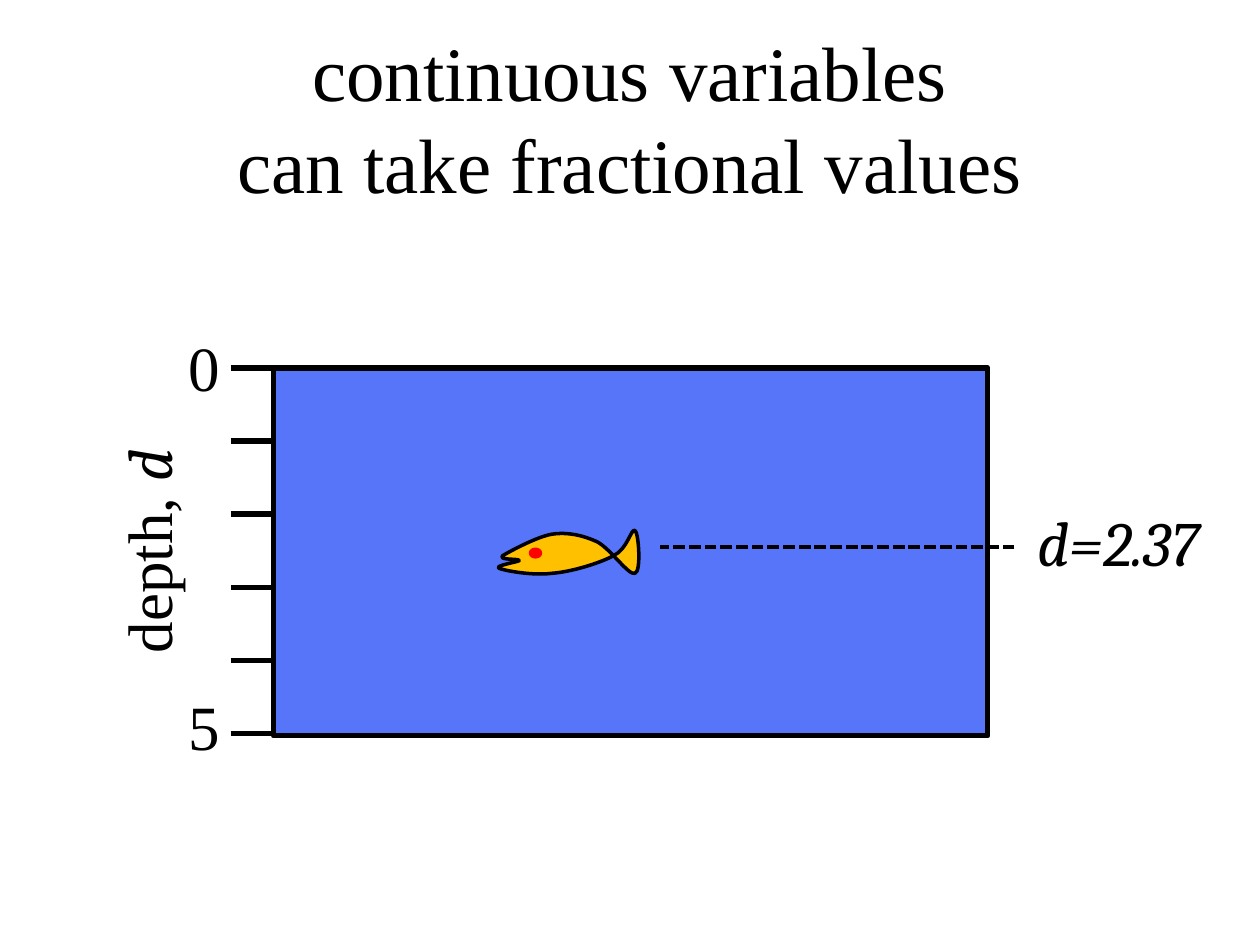
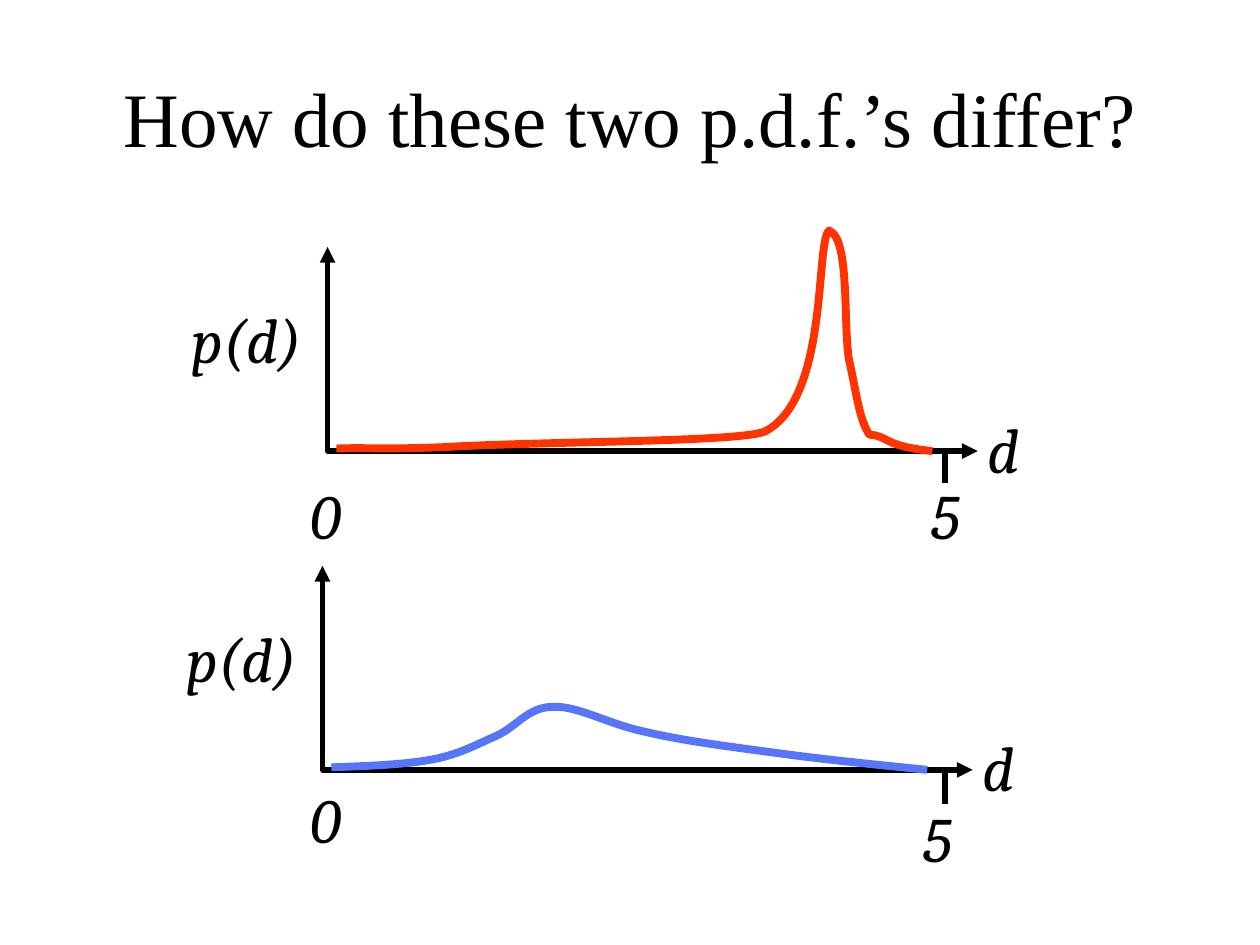
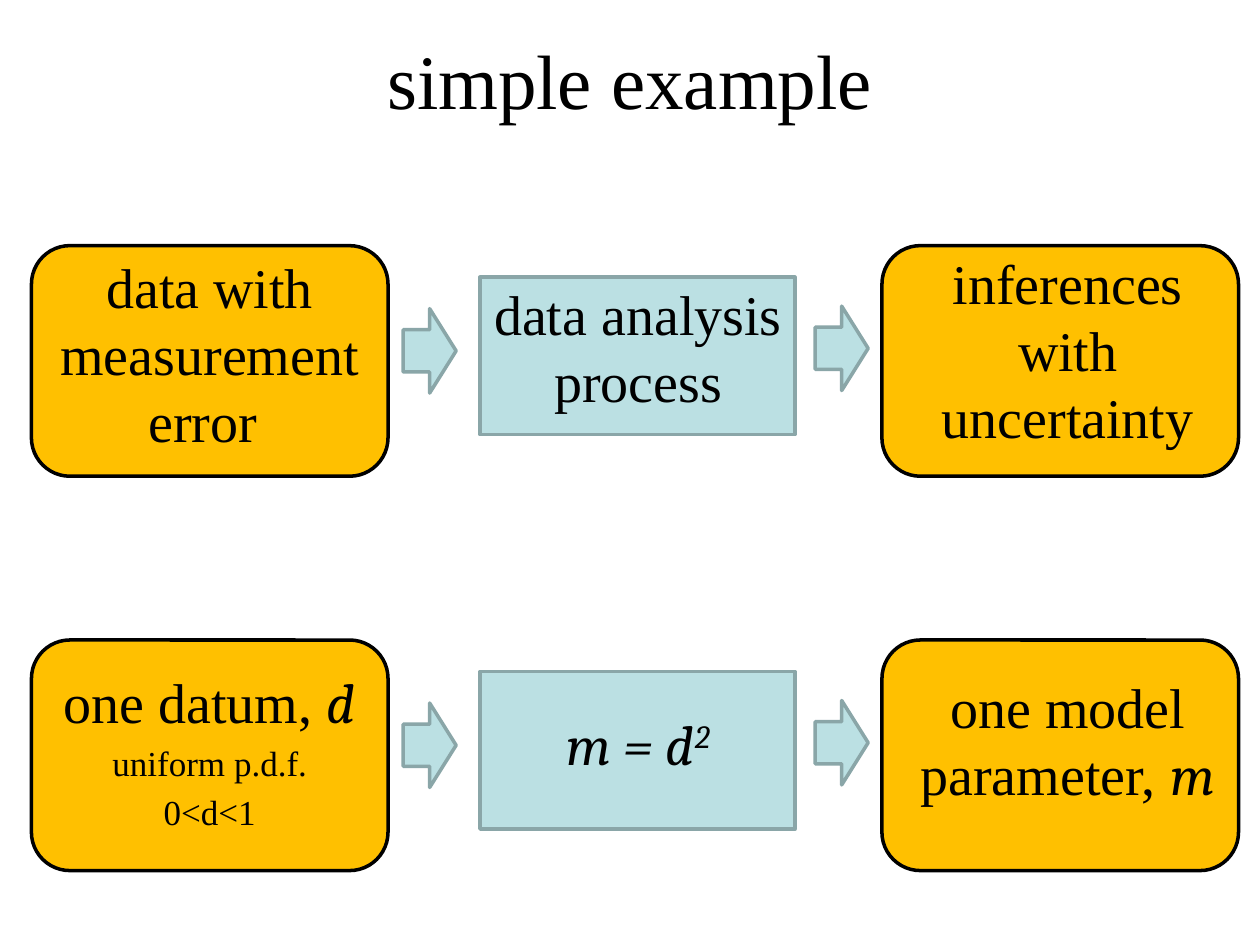
from dataclasses import dataclass
from typing import NamedTuple

from lxml.etree import SubElement
from pptx import Presentation
from pptx.dml.color import RGBColor
from pptx.enum.dml import MSO_LINE
from pptx.enum.shapes import MSO_CONNECTOR, MSO_SHAPE
from pptx.enum.text import MSO_ANCHOR as Anchor, MSO_AUTO_SIZE, PP_ALIGN
from pptx.oxml.ns import qn
from pptx.util import Inches, Pt

COLORS = {
    "ink": "000000", "paper": "FFFFFF", "water": "5675F8", "gold": "FFC000",
    "red": "FF0000", "peak": "FF3300", "pale": "BBE0E3", "pale_edge": "8AA6A8",
}
SERIF, MATH = "Times New Roman", "Cambria"
Point = tuple[float, float]


class Box(NamedTuple):
    left: float
    top: float
    width: float
    height: float

    def moved(self, dx: float, dy: float) -> "Box":
        return Box(self.left + dx, self.top + dy, self.width, self.height)


class Words(NamedTuple):
    text: str
    font: str = SERIF
    size: float = 36
    raised: bool = False


@dataclass(frozen=True)
class Plot:
    origin: Point
    color: str
    curve: list[Point]
    zero: Point
    five: Point
    tick_top: float


@dataclass(frozen=True)
class Step:
    text_box: Box
    lines: list[list[Words]]


FISH = [
    (3.99, 4.41), (4.04, 4.38), (4.26, 4.26), (4.38, 4.24),
    (4.51, 4.22), (4.63, 4.25), (4.74, 4.3), (4.85, 4.36), (4.99, 4.57), (5.04, 4.55),
    (5.09, 4.54), (5.07, 4.23), (5.04, 4.21), (5.01, 4.19), (4.98, 4.36), (4.87, 4.41),
    (4.76, 4.47), (4.53, 4.54), (4.38, 4.55), (4.23, 4.57), (4.01, 4.53), (3.96, 4.51),
    (3.92, 4.49), (4.11, 4.46), (4.12, 4.45), (4.13, 4.43), (3.95, 4.45), (3.99, 4.41),
]
PLOTS = [
    Plot((2.6, 3.58), "peak", [
        (2.67, 3.56), (2.96, 3.55), (2.93, 3.57), (3.5, 3.55),
        (4.36, 3.5), (5.93, 3.51), (6.08, 3.42), (6.58, 3.15), (6.47, 1.93), (6.58, 1.83),
        (6.75, 1.89), (6.69, 2.59), (6.74, 2.86), (6.8, 3.13), (6.82, 3.33), (6.9, 3.45),
        (7.06, 3.46), (7, 3.54), (7.4, 3.58),
    ], (2, 3.67), (6.92, 3.67), 3.58),
    Plot((2.56, 6.11), "water", [
        (2.63, 6.09), (2.91, 6.08), (3.2, 6.07), (3.42, 6.03),
        (3.64, 5.99), (3.78, 5.91), (3.94, 5.84), (4.1, 5.77), (4.19, 5.61), (4.39, 5.61),
        (4.59, 5.6), (4.83, 5.75), (5.13, 5.81), (5.42, 5.88), (5.82, 5.93), (6.19, 5.98),
        (6.56, 6.03), (6.96, 6.07), (7.36, 6.11),
    ], (2, 6.08), (6.86, 6.23), 6.13),
]
ROW_PITCH = 3.13
ROW_SHAPES = [
    (MSO_SHAPE.RECTANGLE, Box(3.81, 2.2, 2.5, 1.25), "pale", "pale_edge"),
    (MSO_SHAPE.ROUNDED_RECTANGLE, Box(7, 1.95, 2.83, 1.83), "gold", "ink"),
    (MSO_SHAPE.ROUNDED_RECTANGLE, Box(0.25, 1.95, 2.83, 1.83), "gold", "ink"),
    (MSO_SHAPE.RIGHT_ARROW, Box(3.2, 2.45, 0.42, 0.67), "pale", "pale_edge"),
    (MSO_SHAPE.RIGHT_ARROW, Box(6.47, 2.43, 0.42, 0.67), "pale", "pale_edge"),
]
FIRST_STEP = Step(Box(0.33, 1.95, 2.67, 1.92), [[Words("data with measurement error ", size=32)]])
OTHER_STEPS = [
    Step(Box(3.73, 2.17, 2.67, 1.92), [[Words("data analysis process", size=32)]]),
    Step(Box(7.14, 1.92, 2.67, 1.92), [[Words("inferences with uncertainty", size=32)]]),
    Step(Box(0.33, 5.25, 2.67, 1.92), [
        [Words("one datum, ", size=32), Words("d", MATH, 32)],
        [Words("uniform p.d.f.", size=20)],
        [Words("0<d<1", size=20)],
    ]),
    Step(Box(3.73, 5.58, 2.67, 0.67), [[Words("m = d", MATH, 32), Words("2", MATH, 32, True)]]),
    Step(Box(7.14, 5.29, 2.67, 1.29), [[Words("one model parameter, ", size=32), Words("m", MATH, 32)]]),
]


def rgb(name: str) -> RGBColor:
    return RGBColor.from_string(COLORS[name])


def place(shape, box: Box) -> None:
    shape.left, shape.top, shape.width, shape.height = map(Inches, box)


def prepare_frame(shape, anchor):
    frame = shape.text_frame
    frame.word_wrap = True
    frame.auto_size = MSO_AUTO_SIZE.NONE
    frame.vertical_anchor = anchor
    return frame


def format_font(font, name: str, size: float) -> None:
    font.name, font.size = name, Pt(size)
    font.italic = name == MATH
    font.color.rgb = rgb("ink")


def write(shape, lines: list[list[Words]], anchor=Anchor.MIDDLE, space: float = 0) -> None:
    frame = prepare_frame(shape, anchor)
    for index, line in enumerate(lines):
        paragraph = frame.paragraphs[0] if index == 0 else frame.add_paragraph()
        paragraph.alignment = PP_ALIGN.CENTER
        paragraph.space_before = Pt(line[0].size * space)
        for words in line:
            run = paragraph.add_run()
            run.text = words.text
            format_font(run.font, words.font, words.size)
            if words.raised:
                run._r.get_or_add_rPr().set("baseline", "30000")


def add_label(slide, box: Box, *words: Words):
    label = slide.shapes.add_textbox(*map(Inches, box))
    write(label, [list(words)])
    return label


def set_title(slide, lines: list[str], box: Box) -> None:
    title = slide.shapes.title
    place(title, box)
    paragraph = prepare_frame(title, Anchor.MIDDLE).paragraphs[0]
    paragraph.text = "\v".join(lines)
    paragraph.alignment = PP_ALIGN.CENTER
    for run in paragraph.runs:
        format_font(run.font, SERIF, 44)


def paint(shape, fill: str | None, line: str, weight: float):
    shape.shadow.inherit = False
    if fill:
        shape.fill.solid()
        shape.fill.fore_color.rgb = rgb(fill)
    else:
        shape.fill.background()
    shape.line.color.rgb = rgb(line)
    shape.line.width = Pt(weight)
    return shape


def add_preset(slide, kind, box: Box, fill: str, line: str, weight: float = 2):
    return paint(slide.shapes.add_shape(kind, *map(Inches, box)), fill, line, weight)


def add_line(slide, start: Point, end: Point, weight: float = 3):
    line = slide.shapes.add_connector(MSO_CONNECTOR.STRAIGHT, *map(Inches, start + end))
    line.line.color.rgb = rgb("ink")
    line.line.width = Pt(weight)
    SubElement(line._element.spPr, qn("a:effectLst"))
    return line


def add_outline(slide, points: list[Point], closed: bool = False):
    start, *rest = [(Inches(x), Inches(y)) for x, y in points]
    builder = slide.shapes.build_freeform(*start)
    builder.add_line_segments(rest, close=closed)
    return builder.convert_to_shape()


def add_curve(slide, points: list[Point], closed: bool = False):
    curve = add_outline(slide, points, closed)
    segments = list(curve._element.iter(qn("a:lnTo")))
    for first, second, third in zip(segments[::3], segments[1::3], segments[2::3]):
        bezier = first.makeelement(qn("a:cubicBezTo"))
        first.addprevious(bezier)
        for segment in (first, second, third):
            bezier.append(segment[0])
            segment.getparent().remove(segment)
    return curve


def add_axes(slide, origin: Point) -> None:
    x, y = origin
    axes = paint(add_outline(slide, [(x, y - 1.62), origin, (x + 5.16, y)]), None, "ink", 3)
    for end in ("a:headEnd", "a:tailEnd"):
        SubElement(axes.line._get_or_add_ln(), qn(end), type="triangle")


def add_plot(slide, plot: Plot) -> None:
    x, y = plot.origin
    add_axes(slide, plot.origin)
    paint(add_curve(slide, plot.curve), None, plot.color, 4.5)
    add_label(slide, Box(x + 4.78, y - 0.44, 1.17, 0.83), Words("d", MATH))
    add_label(slide, Box(x - 1.35, y - 1.31, 1.42, 0.83), Words("p(d)", MATH))
    add_line(slide, (7.5, plot.tick_top), (7.5, plot.tick_top + 0.25))
    for text, corner in (("0", plot.zero), ("5", plot.five)):
        add_label(slide, Box(*corner, 1.17, 0.83), Words(text, MATH))


def build_depth(slide) -> None:
    set_title(slide, ["continuous variables", "can take fractional values"], Box(0.5, 0.3, 9, 1.25))
    add_preset(slide, MSO_SHAPE.RECTANGLE, Box(2.17, 2.92, 5.67, 2.92), "water", "ink", 3)
    for text, top in (("0", 2.32), ("5", 5.17)):
        add_label(slide, Box(1.08, top, 1.08, 1.17), Words(text))
    for mark in range(6):
        depth = 2.92 + 0.58 * mark
        add_line(slide, (1.83, depth), (2.17, depth))
    paint(add_curve(slide, FISH, closed=True), "gold", "ink", 2)
    add_preset(slide, MSO_SHAPE.OVAL, Box(4.21, 4.36, 0.08, 0.06), "red", "red")
    add_line(slide, (8.05, 4.34), (5.24, 4.34), 2.25).line.dash_style = MSO_LINE.SQUARE_DOT
    axis_name = add_label(slide, Box(-1.04, 4.04, 4.42, 1.17), Words("depth, "), Words("d", MATH))
    axis_name.rotation = 270
    axis_name.text_frame.paragraphs[0]._p.get_or_add_pPr().set("marL", str(Inches(0.5)))
    add_label(slide, Box(7.96, 3.71, 1.83, 1.17), Words("d=2.37", MATH))


def build_densities(slide) -> None:
    set_title(slide, ["How do these two p.d.f.’s differ?"], Box(0, 0.3, 10, 1.25))
    for plot in PLOTS:
        add_plot(slide, plot)


def build_example(slide) -> None:
    set_title(slide, ["simple example"], Box(0.5, 0, 9, 1.25))
    for row in range(2):
        for kind, box, fill, line in ROW_SHAPES:
            add_preset(slide, kind, box.moved(0, row * ROW_PITCH), fill, line)
    body = slide.placeholders[1]
    place(body, FIRST_STEP.text_box)
    write(body, FIRST_STEP.lines, Anchor.TOP, 0.2)
    properties = body.text_frame.paragraphs[0]._p.get_or_add_pPr()
    properties.set("marL", "0")
    properties.set("indent", "0")
    SubElement(properties, qn("a:buNone"))
    body._element.getparent().append(body._element)
    for step in OTHER_STEPS:
        step_text = slide.shapes.add_textbox(*map(Inches, step.text_box))
        write(step_text, step.lines, Anchor.TOP, 0.2)


def main() -> None:
    deck = Presentation()
    deck.slide_width, deck.slide_height = Inches(10), Inches(7.5)
    for layout, build in ((5, build_depth), (5, build_densities), (1, build_example)):
        slide = deck.slides.add_slide(deck.slide_layouts[layout])
        slide.background.fill.solid()
        slide.background.fill.fore_color.rgb = rgb("paper")
        build(slide)
    deck.save("out.pptx")


if __name__ == "__main__":
    main()
